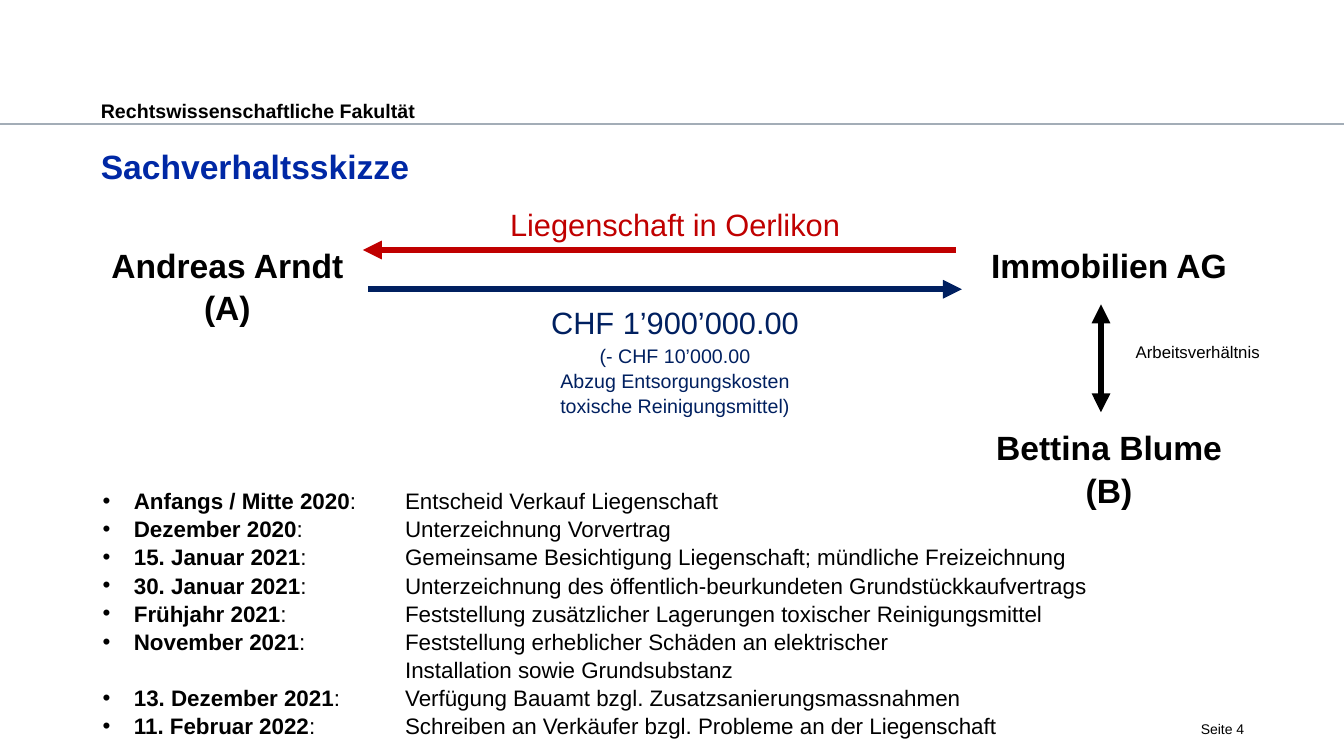
import pptx
import pptx.dml.color
import pptx.enum.shapes
import pptx.enum.text
import pptx.oxml
import pptx.oxml.ns
import pptx.util
from lxml import etree

Inches = pptx.util.Inches
Pt = pptx.util.Pt
ALIGN = pptx.enum.text.PP_ALIGN
INKS = {"black": "000000", "blue": "0028A5", "navy": "002060", "red": "C00000", "rule": "A3ADB7"}
DATES = [
    ("Anfangs / Mitte 2020", "Entscheid Verkauf Liegenschaft"),
    ("Dezember 2020", "Unterzeichnung Vorvertrag"),
    ("15. Januar 2021", "Gemeinsame Besichtigung Liegenschaft; mündliche Freizeichnung"),
    ("30. Januar 2021", "Unterzeichnung des öffentlich-beurkundeten Grundstückkaufvertrags"),
    ("Frühjahr 2021", "Feststellung zusätzlicher Lagerungen toxischer Reinigungsmittel"),
    ("November 2021", "Feststellung erheblicher Schäden an elektrischer\n\tInstallation sowie Grundsubstanz"),
    ("13. Dezember 2021", "Verfügung Bauamt bzgl. Zusatzsanierungsmassnahmen"),
    ("11. Februar 2022", "Schreiben an Verkäufer bzgl. Probleme an der Liegenschaft"),
]


def color(ink):
    """Return the colour of a named ink."""
    return pptx.dml.color.RGBColor.from_string(INKS[ink])


def frame(slide, box, inset=(0, 0, 0, 0), wrap=True):
    """Add a text box and return its text frame."""
    text = slide.shapes.add_textbox(*map(Inches, box)).text_frame
    sides = ("margin_left", "margin_top", "margin_right", "margin_bottom")
    for side, size in zip(sides, inset):
        setattr(text, side, Inches(size))
    text.word_wrap = wrap
    return text


def style(para, size, ink="black", bold=False, align=ALIGN.LEFT):
    """Set the look of a paragraph."""
    para.alignment = align
    para.line_spacing = 1.05
    for name, value in {"name": "Arial", "size": Pt(size), "bold": bold}.items():
        setattr(para.font, name, value)
    para.font.color.rgb = color(ink)


def write(para, words, bold=None):
    """Add words to a paragraph, with a line break at each newline."""
    for i, line in enumerate(words.split("\n")):
        if i:
            para.add_line_break()
        run = para.add_run()
        run.text = line
        run.font.bold = bold


def label(slide, box, words, size, ink="black", bold=False, align=ALIGN.CENTER, top=0, wrap=False):
    """Add a text box with one paragraph and return its text frame."""
    text = frame(slide, box, (0, top, 0, 0), wrap)
    style(text.paragraphs[0], size, ink, bold, align)
    write(text.paragraphs[0], words)
    return text


def line(slide, start, end, ink, width, ends=()):
    """Add a straight line with arrowheads at the named ends."""
    kind = pptx.enum.shapes.MSO_CONNECTOR.STRAIGHT
    link = slide.shapes.add_connector(kind, *map(Inches, start + end))
    link.line.color.rgb = color(ink)
    link.line.width = Pt(width)
    stroke = link.line._get_or_add_ln()
    for tip in ends:
        etree.SubElement(stroke, pptx.oxml.ns.qn("a:" + tip), type="triangle")
    etree.SubElement(link._element.spPr, pptx.oxml.ns.qn("a:effectLst"))


def header(slide, box):
    """Place the faculty name, rule and title."""
    x, y, w, h = box
    line(slide, (0, y + 0.3), (13.33, y + 0.3), "rule", 1.25)
    label(slide, (x, y, 8.02, 0.25), "Rechtswissenschaftliche Fakultät", 14,
          bold=True, align=ALIGN.LEFT, top=0.04, wrap=True)
    label(slide, (x, y + 0.46, w, h - 0.46), "Sachverhaltsskizze", 24, "blue", True,
          ALIGN.LEFT, 0.04, True)


def sketch(slide, box):
    """Place the parties and the arrows between them."""
    x, y, w, h = box
    label(slide, (x, y + 0.39, 2.49, 0.81), "Andreas Arndt (A)", 24, bold=True, wrap=True)
    label(slide, (x + 8.81, y + 0.39, 2.36, 0.4), "Immobilien AG", 24, bold=True)
    label(slide, (x + 8.86, y + 2.2, 2.26, 0.81), "Bettina Blume\n(B)", 24, bold=True)
    label(slide, (x + 4.03, y, 3.31, 0.37), "Liegenschaft in Oerlikon", 22, "red")
    price = label(slide, (x + 4.44, y + 0.97, 2.49, 1.11), "CHF 1’900’000.00", 22, "navy")
    less = price.add_paragraph()
    style(less, 14, "navy", align=ALIGN.CENTER)
    less.space_before = Pt(2)
    write(less, "(- CHF 10’000.00\nAbzug Entsorgungskosten\ntoxische Reinigungsmittel)")
    label(slide, (x + w - 1.24, y + 1.36, 1.24, 0.2), "Arbeitsverhältnis", 12)
    line(slide, (x + 8.47, y + 0.46), (x + 2.59, y + 0.46), "red", 4.5, ["tailEnd"])
    line(slide, (x + 2.64, y + 0.85), (x + 8.53, y + 0.85), "navy", 4.5, ["tailEnd"])
    line(slide, (x + 9.91, y + 1), (x + 9.91, y + 2.07), "black", 4.5, ["headEnd", "tailEnd"])


def events(slide, box):
    """Place the bulleted list of dates."""
    text = frame(slide, box, (0.1, 0.05, 0.1, 0.05))
    for i, (date, event) in enumerate(DATES):
        para = text.add_paragraph() if i else text.paragraphs[0]
        props = para._p.get_or_add_pPr()
        props.set("marL", str(Inches(0.31)))
        props.set("indent", str(-Inches(0.31)))
        etree.SubElement(props, pptx.oxml.ns.qn("a:buFont"), typeface="Arial")
        etree.SubElement(props, pptx.oxml.ns.qn("a:buChar"), char="•")
        tabs = etree.SubElement(props, pptx.oxml.ns.qn("a:tabLst"))
        etree.SubElement(tabs, pptx.oxml.ns.qn("a:tab"), pos=str(Inches(3)), algn="l")
        style(para, 16)
        write(para, date, True)
        write(para, ":\t" + event)


def footer(slide, box):
    """Place the page number."""
    label(slide, box, "Seite 4", 10, align=ALIGN.RIGHT, wrap=True)


def main():
    """Build the slide and save it."""
    deck = pptx.Presentation()
    deck.slide_width, deck.slide_height = Inches(13.33), Inches(7.5)
    slide = deck.slides.add_slide(deck.slide_layouts[6])
    header(slide, (1, 0.93, 11.34, 1.09))
    footer(slide, (11.43, 7.14, 0.91, 0.24))
    events(slide, (0.92, 4.77, 11.34, 2.52))
    sketch(slide, (1.01, 2.02, 11.49, 3.01))
    deck.save("out.pptx")


if __name__ == "__main__":
    main()
